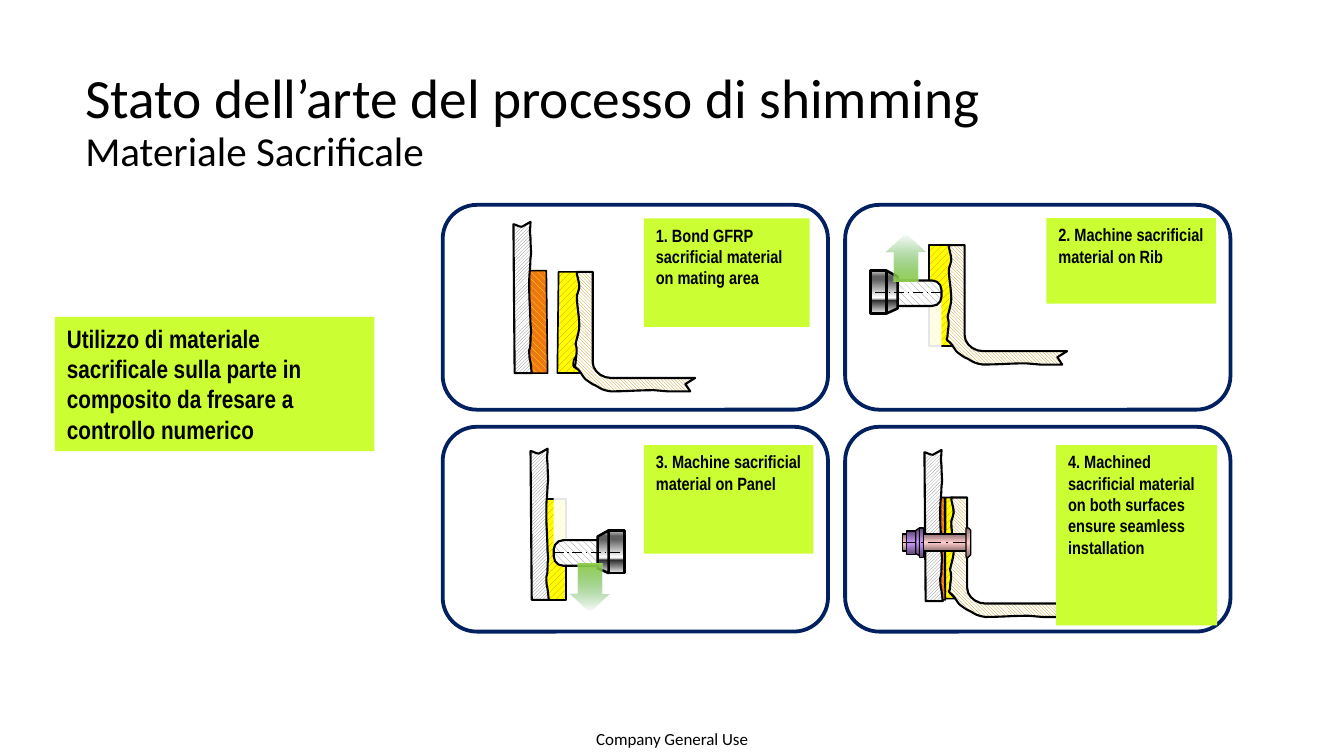
"""Build the slide on shimming with sacrificial material."""
from dataclasses import dataclass

from lxml.etree import SubElement
from pptx import Presentation
from pptx.dml.color import RGBColor
from pptx.enum.dml import MSO_LINE, MSO_PATTERN as PATTERN
from pptx.enum.shapes import MSO_CONNECTOR, MSO_SHAPE as SHAPE
from pptx.enum.text import MSO_ANCHOR, MSO_AUTO_SIZE, PP_ALIGN
from pptx.oxml import parse_xml
from pptx.oxml.ns import nsdecls, qn
from pptx.util import Inches, Pt


@dataclass(frozen=True)
class Theme:
    black: str = "000000"
    white: str = "FFFFFF"
    lime: str = "CCFF33"
    navy: str = "002060"
    heading_font: str = "Calibri"
    label_font: str = "Arial Narrow"
    title_size: float = 32.7
    subtitle_size: float = 24.3
    claim_size: float = 14.9
    label_size: float = 10.5
    footer_size: float = 10


@dataclass(frozen=True)
class Hatch:
    pattern: PATTERN
    front: str
    back: str


@dataclass(frozen=True)
class Gradient:
    stops: tuple
    angle: int = 90


THEME = Theme()
TITLE = "Stato dell’arte del processo di shimming"
SUBTITLE = "Materiale Sacrificale"
CLAIM = "Utilizzo di materiale sacrificale sulla parte in composito da fresare a controllo numerico"
FOOTER = "Company General Use"
STEPS = [
    ("1. Bond GFRP sacrificial material on mating area", (5.28, 1.79, 1.36, 0.89)),
    ("2. Machine sacrificial material on Rib", (8.58, 1.79, 1.39, 0.7)),
    ("3. Machine sacrificial material on Panel", (5.28, 3.65, 1.39, 0.89)),
    ("4. Machined sacrificial material on both surfaces ensure seamless installation",
     (8.66, 3.65, 1.32, 1.48)),
]

YELLOW_HATCH = Hatch(PATTERN.WIDE_UPWARD_DIAGONAL, "EE7713", "FFFF00")
ORANGE_HATCH = Hatch(PATTERN.WIDE_DOWNWARD_DIAGONAL, "FFFF00", "EE7713")
RIB_HATCH = Hatch(PATTERN.DARK_DOWNWARD_DIAGONAL, "BF9000", "FFFFFF")
PANEL_HATCH = Hatch(PATTERN.DARK_UPWARD_DIAGONAL, "7C7C7C", "FFFFFF")
CUTTER_HATCH = Hatch(PATTERN.WIDE_DOWNWARD_DIAGONAL, "808080", "FFFFFF")
STEEL = Gradient(((0, "CBCBCB"), (13, "5F5F5F"), (21, "5F5F5F"), (63, "FFFFFF"),
                  (67, "B2B2B2"), (69, "292929"), (82, "777777"), (100, "EAEAEA")))
PINK_STOPS = ((0, "8F7272"), (50, "FFCCCC"), (100, "8F7272"))
PURPLE = Gradient(((0, "5E4776"), (50, "CC99FF"), (100, "5E4776")))
MOTION_STOPS = ((0, "249224", 0), (100, "92D050"))

# Outlines hold line ends (x, y) and cubic curves (x1, y1, x2, y2, x, y).
RIB = [(0.02, 0), (0.02, 0.04, 0.04, 0.08, 0.04, 0.12), (0.04, 0.14, 0.02, 0.19, 0.02, 0.2),
       (0.02, 0.28, 0.04, 0.36, 0.04, 0.44), (0.04, 0.49, 0.02, 0.54, 0.01, 0.59),
       (0.03, 0.65, 0.01, 0.69, 0.01, 0.74), (0.01, 0.78, -0.02, 0.76, 0.03, 0.8),
       (0.05, 0.82, 0.07, 0.86, 0.09, 0.88), (0.12, 0.9, 0.14, 0.92, 0.17, 0.93),
       (0.21, 0.95, 0.22, 0.97, 0.3, 0.98), (0.42, 0.98, 0.53, 0.97, 0.65, 0.97),
       (0.77, 0.98), (0.95, 0.98), (0.91, 0.92), (0.99, 0.87), (0.3, 0.87),
       (0.22, 0.87, 0.15, 0.81, 0.15, 0.74), (0.15, 0)]
PANEL = [(0, 0.02), (0.02, 0.02, 0.04, 0.04, 0.07, 0.04), (0.14, 0),
         (0.14, 0.08, 0.13, 0.03, 0.14, 0.13), (0.14, 0.22, 0.15, 0.24, 0.14, 0.3),
         (0.14, 0.36, 0.13, 0.43, 0.13, 0.47), (0.13, 0.63, 0.13, 0.51, 0.13, 0.57),
         (0.13, 0.63, 0.14, 0.77, 0.14, 0.84), (0.15, 0.93, 0.14, 0.92, 0.14, 0.95),
         (0.14, 0.99, 0.14, 1.03, 0.13, 1.05), (0.13, 1.08, 0.13, 1.12, 0.14, 1.15),
         (0.15, 1.24), (0.01, 1.24)]
ORANGE_LAYER = [(0.2, 0.84), (0.19, 0), (0.02, 0), (0.01, 0.06, 0, 0.03, 0, 0.07),
                (0, 0.23, 0, 0.11, 0.01, 0.17), (0.01, 0.23, 0.04, 0.37, 0.04, 0.44),
                (0.05, 0.53, 0.02, 0.52, 0.02, 0.56), (0.02, 0.59, 0.02, 0.63, 0.01, 0.65),
                (0, 0.68, 0.02, 0.72, 0.02, 0.75), (0.06, 0.84)]
YELLOW_LAYER = [(0.19, 0), (0.19, 0.04, 0.23, 0.09, 0.23, 0.13),
                (0.23, 0.14, 0.17, 0.19, 0.17, 0.21), (0.17, 0.28, 0.24, 0.37, 0.24, 0.45),
                (0.24, 0.49, 0.16, 0.55, 0.15, 0.6), (0.22, 0.66, 0.12, 0.7, 0.13, 0.75),
                (0.13, 0.78, 0.11, 0.79, 0.29, 0.83), (0, 0.83), (0.01, 0)]

presentation = Presentation()
presentation.slide_width, presentation.slide_height = Inches(11.02), Inches(6.2)
slide = presentation.slides.add_slide(presentation.slide_layouts[5])
shapes = slide.shapes


def style(shape, fill=None, width=0, line=THEME.black):
    shape.shadow.inherit = False
    if isinstance(fill, Hatch):
        shape.fill.patterned()
        shape.fill.pattern = fill.pattern
        shape.fill.fore_color.rgb = RGBColor.from_string(fill.front)
        shape.fill.back_color.rgb = RGBColor.from_string(fill.back)
    elif isinstance(fill, str):
        shape.fill.solid()
        shape.fill.fore_color.rgb = RGBColor.from_string(fill)
    else:
        shape.fill.background()
    if isinstance(fill, Gradient):
        stops = "".join(
            f'<a:gs pos="{position * 1000}"><a:srgbClr val="{colour}">'
            + "".join(f'<a:alpha val="{value * 1000}"/>' for value in alpha)
            + "</a:srgbClr></a:gs>" for position, colour, *alpha in fill.stops)
        properties = shape.element.spPr
        properties.replace(properties.find(qn("a:noFill")), parse_xml(
            f'<a:gradFill {nsdecls("a")} rotWithShape="1"><a:gsLst>{stops}</a:gsLst>'
            f'<a:lin ang="{fill.angle * 60000}" scaled="0"/></a:gradFill>'))
    if width:
        shape.line.color.rgb = RGBColor.from_string(line)
        shape.line.width = Pt(width)
    else:
        shape.line.fill.background()
    return shape


def add_part(kind, box, fill=None, width=0, line=THEME.black, adjustments=()):
    shape = shapes.add_shape(kind, *map(Inches, box))
    for index, value in enumerate(adjustments):
        shape.adjustments[index] = value
    return style(shape, fill, width, line)


def add_outline(outline, origin, fill, width, stretch=1):
    points = [outline[0]]
    for segment in outline[1:]:
        if len(segment) == 2:
            points.append(segment)
            continue
        ends = list(zip(points[-1] + segment[::2][:0], segment[:2], segment[2:4], segment[4:]))
        for t in (0.2, 0.4, 0.6, 0.8, 1):
            weights = ((1 - t) ** 3, 3 * t * (1 - t) ** 2, 3 * t * t * (1 - t), t ** 3)
            points.append(tuple(sum(w * v for w, v in zip(weights, axis)) for axis in ends))
    left, top = origin
    placed = [(Inches(left + x * stretch), Inches(top + y)) for x, y in points]
    builder = shapes.build_freeform(*placed[0])
    builder.add_line_segments(placed[1:], close=True)
    return style(builder.convert_to_shape(), fill, width)


def add_axis(start, end, y, width):
    axis = shapes.add_connector(MSO_CONNECTOR.STRAIGHT, *map(Inches, (start, y, end, y)))
    axis.line.color.rgb = RGBColor.from_string(THEME.black)
    axis.line.width = Pt(width)
    axis.line.dash_style = MSO_LINE.LONG_DASH_DOT
    SubElement(axis.element.spPr, qn("a:effectLst"))


def write(frame, text, font, size, bold=False, align=PP_ALIGN.LEFT, anchor=MSO_ANCHOR.TOP):
    frame.word_wrap, frame.vertical_anchor = True, anchor
    paragraph = frame.paragraphs[0]
    paragraph.text, paragraph.alignment = text, align
    paragraph.font.name, paragraph.font.size, paragraph.font.bold = font, Pt(size), bold
    paragraph.font.color.rgb = RGBColor.from_string(THEME.black)
    return paragraph


def add_label(text, box, size):
    label = add_part(SHAPE.RECTANGLE, box, THEME.lime)
    write(label.text_frame, text, THEME.label_font, size, bold=True)


def add_cutter(tip, y, side, travel):
    """Draw a cutter whose body lies to one side (-1 left, 1 right) and its travel (-1 up, 1 down)."""
    def span(near, far, top, height):
        return min(tip + side * near, tip + side * far), y + top, far - near, height

    faded = add_part(SHAPE.RECTANGLE, span(0, 0.32, -0.06 if travel < 0 else -0.45, 0.51), THEME.white)
    SubElement(faded.element.spPr.find(".//" + qn("a:srgbClr")), qn("a:alpha"), val="90000")
    add_part(SHAPE.ROUNDED_RECTANGLE, span(0, 0.45, -0.1, 0.21), CUTTER_HATCH, 1.25, adjustments=[0.37])
    add_part(SHAPE.RECTANGLE, span(0.45, 0.58, -0.18, 0.35), STEEL, 1.5)
    cone = [(0.45, -0.18), (0.36, -0.13), (0.36, 0.13), (0.45, 0.17)]
    add_outline(cone, (tip, y), STEEL, 1.5, stretch=side)
    add_axis(tip, tip + side * 0.6, y, 0.75)
    arrow = SHAPE.UP_ARROW if travel < 0 else SHAPE.DOWN_ARROW
    motion = Gradient(MOTION_STOPS, 90 if travel < 0 else 270)
    add_part(arrow, span(0.13, 0.46, travel * 0.29 - 0.195, 0.39), motion, adjustments=[0.6, 0.45])


def add_rivet(left, y):
    add_part(SHAPE.RECTANGLE, (left, y - 0.07, 0.54, 0.14), Gradient(PINK_STOPS), 0.75)
    head = add_part(SHAPE.SNIP_2_SAME_RECTANGLE, (left + 0.42, y - 0.02, 0.24, 0.04),
                    Gradient(PINK_STOPS, 0), 0.75, adjustments=[0.5, 0])
    head.rotation = 90
    cone = [(0.14, -0.12), (0.11, -0.1), (0.11, 0.09), (0.14, 0.11)]
    add_outline(cone, (left, y), PURPLE, 0.75)
    for offset, width, height in [(0.03, 0.08, 0.19), (0.14, 0.03, 0.24)]:
        add_part(SHAPE.RECTANGLE, (left + offset, y - height / 2, width, height), PURPLE, 0.75)
    add_axis(left, left + 0.54, y, 1)


title = shapes.title
title.left, title.top, title.width, title.height = map(Inches, (0.6, 0.69, 9.82, 0.64))
title.text_frame.auto_size = MSO_AUTO_SIZE.NONE
heading = write(title.text_frame, TITLE, THEME.heading_font, THEME.title_size, anchor=MSO_ANCHOR.MIDDLE)
heading.line_spacing = 0.9
heading.add_line_break()
subtitle = heading.add_run()
subtitle.text, subtitle.font.size = SUBTITLE, Pt(THEME.subtitle_size)

footer = shapes.add_textbox(*map(Inches, (4.72, 5.91, 1.58, 0.29))).text_frame
footer.margin_left = footer.margin_right = footer.margin_top = footer.margin_bottom = 0
write(footer, FOOTER, THEME.heading_font, THEME.footer_size,
      align=PP_ALIGN.CENTER, anchor=MSO_ANCHOR.MIDDLE)
add_label(CLAIM, (0.45, 2.6, 2.62, 1.1), THEME.claim_size)

for number in range(len(STEPS)):
    row, column = divmod(number, 2)
    add_part(SHAPE.ROUNDED_RECTANGLE, (3.63 + 3.3 * column, 1.68 + 1.82 * row, 3.16, 1.68),
             width=2.25, line=THEME.navy)

for orange, yellow, rib, panel, stretch in [
        ((4.29, 2.22), (4.57, 2.23), (4.71, 2.23), (4.21, 1.82), 1),
        ((7.69, 4.08), (7.75, 4.08), (7.78, 4.08), (7.58, 3.69), 0.3)]:
    add_outline(YELLOW_LAYER, yellow, YELLOW_HATCH, 1, stretch)
    add_outline(ORANGE_LAYER, orange, ORANGE_HATCH, 1, stretch)
    add_outline(RIB, rib, RIB_HATCH, 1.25)
    add_outline(PANEL, panel, PANEL_HATCH, 1.25)
add_rivet(7.4, 4.45)

for slab, outline, origin, hatch, cutter in [
        ((7.62, 2.01), RIB, (7.76, 2.01), RIB_HATCH, (7.72, 2.4, -1, -1)),
        ((4.45, 4.09), PANEL, (4.35, 3.68), PANEL_HATCH, (4.54, 4.53, 1, 1))]:
    add_part(SHAPE.RECTANGLE, (*slab, 0.19, 0.83), YELLOW_HATCH, 1)
    add_outline(outline, origin, hatch, 1.25)
    add_cutter(*cutter)

for text, box in STEPS:
    add_label(text, box, THEME.label_size)

presentation.save("out.pptx")
